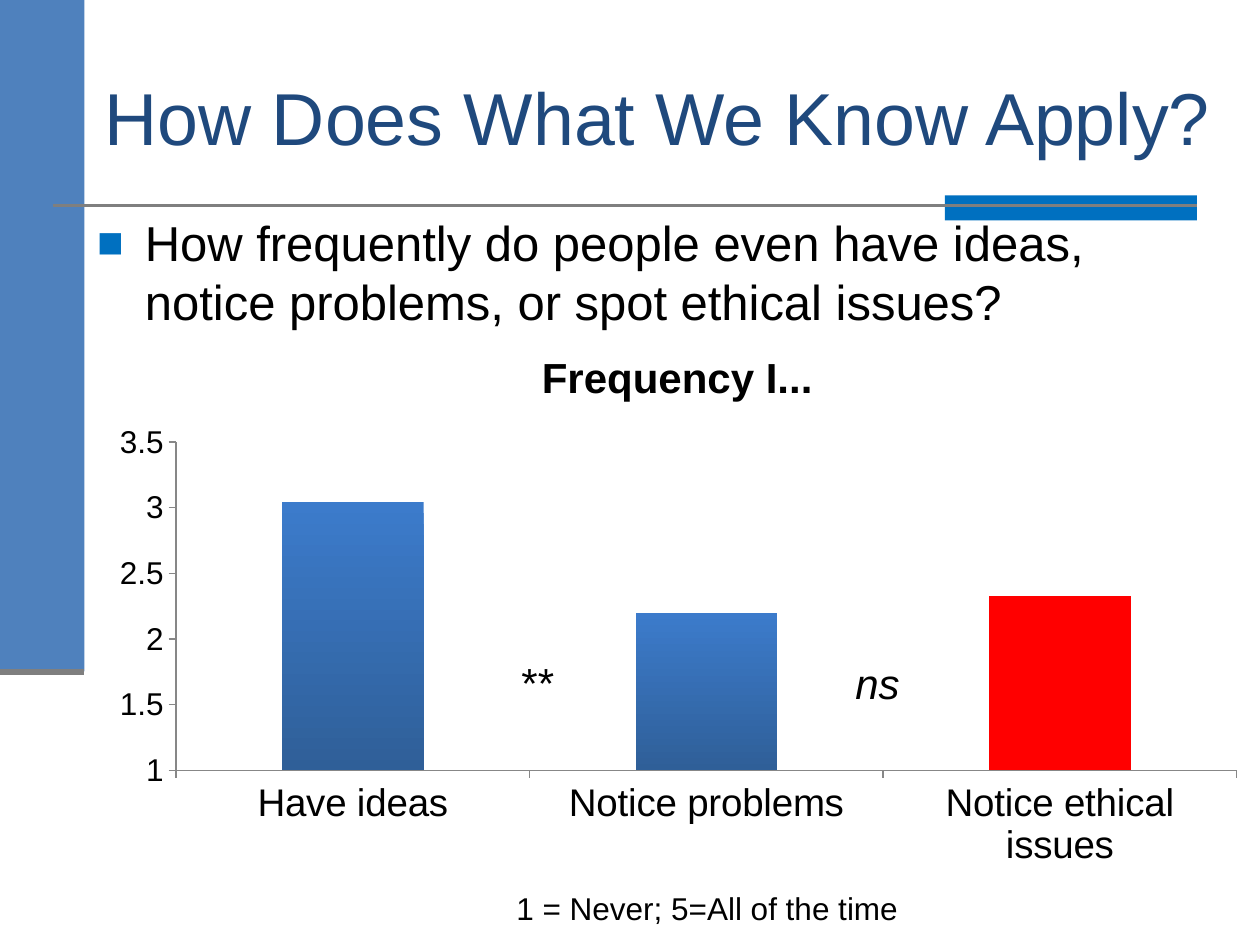
from lxml import etree
from pptx import Presentation
from pptx.chart.data import CategoryChartData
from pptx.dml.color import RGBColor
from pptx.enum.chart import XL_CHART_TYPE, XL_TICK_MARK
from pptx.enum.shapes import MSO_CONNECTOR, MSO_SHAPE
from pptx.enum.text import MSO_ANCHOR, MSO_AUTO_SIZE, PP_ALIGN
from pptx.oxml import parse_xml
from pptx.oxml.ns import nsdecls, qn
from pptx.util import Inches, Pt

COLUMN = XL_CHART_TYPE.COLUMN_CLUSTERED
TICK_OUT, TICK_NONE = XL_TICK_MARK.OUTSIDE, XL_TICK_MARK.NONE
RECTANGLE, STRAIGHT = MSO_SHAPE.RECTANGLE, MSO_CONNECTOR.STRAIGHT
LEFT, MIDDLE = PP_ALIGN.LEFT, MSO_ANCHOR.MIDDLE
NO_FIT, GROW = MSO_AUTO_SIZE.NONE, MSO_AUTO_SIZE.SHAPE_TO_FIT_TEXT

FONT = "Arial"
COLORS = {
    "text": "000000",
    "title": "1F497D",
    "side": "4F81BD",
    "accent": "0070C0",
    "rule": "7F7F7F",
    "axis": "878787",
    "bar_top": "3C7BCB",
    "bar_bottom": "2F5F98",
    "highlight": "FF0000",
}
SIDE_WIDTH, SIDE_HEIGHT = 0.67, 5.33


def color(name):
    return RGBColor.from_string(COLORS[name])


def format_font(font, size, name="text", bold=False, italic=False):
    font.name = FONT
    font.size = Pt(size)
    font.bold = bold
    font.italic = italic
    font.color.rgb = color(name)


def write(frame, text, size, **style):
    para = frame.paragraphs[0]
    para.alignment = LEFT
    span = para.add_run()
    span.text = text
    format_font(span.font, size, **style)
    return para


def place(box, left, top, width, height):
    box.left, box.top = Inches(left), Inches(top)
    box.width, box.height = Inches(width), Inches(height)


def add_block(page, name, *area):
    block = page.shapes.add_shape(RECTANGLE, *map(Inches, area))
    block.shadow.inherit = False
    block.fill.solid()
    block.fill.fore_color.rgb = color(name)
    block.line.fill.background()


def add_rule(page, start, end, level, weight):
    rule = page.shapes.add_connector(
        STRAIGHT, Inches(start), Inches(level), Inches(end), Inches(level))
    rule.line.color.rgb = color("rule")
    rule.line.width = Pt(weight)
    etree.SubElement(rule._element.spPr, qn("a:effectLst"))


def add_label(page, text, area, size, **style):
    box = page.shapes.add_textbox(*map(Inches, area))
    box.text_frame.word_wrap = False
    box.text_frame.auto_size = GROW
    write(box.text_frame, text, size, **style)


def add_title(page, text):
    title = page.shapes.title
    place(title, 0.73, 0.3, 9.85, 1.25)
    title.text_frame.vertical_anchor = MIDDLE
    title.text_frame.auto_size = NO_FIT
    write(title.text_frame, text, 42, name="title")


def add_bullet(page, text):
    body = page.placeholders[1]
    place(body, SIDE_WIDTH, 1.64, 9, 1.27)
    body.text_frame.auto_size = NO_FIT
    properties = write(body.text_frame, text, 28)._p.get_or_add_pPr()
    properties.set("marL", str(Inches(0.38)))
    properties.set("indent", str(Inches(-0.38)))
    bullet_color = etree.SubElement(properties, qn("a:buClr"))
    etree.SubElement(bullet_color, qn("a:srgbClr"), val=COLORS["accent"])
    etree.SubElement(properties, qn("a:buSzPct"), val="90000")
    etree.SubElement(properties, qn("a:buFont"), typeface=FONT)
    etree.SubElement(properties, qn("a:buChar"), char="■")


def format_axis(axis, size):
    axis.has_major_gridlines = False
    axis.major_tick_mark = TICK_OUT
    axis.minor_tick_mark = TICK_NONE
    axis.format.line.color.rgb = color("axis")
    format_font(axis.tick_labels.font, size)


def set_plot_area(chart, **shares):
    plot_area = chart._chartSpace.chart.plotArea
    for old in plot_area.findall(qn("c:layout")):
        plot_area.remove(old)
    parts = "".join(f'<c:{key} val="{share}"/>' for key, share in shares.items())
    plot_area.insert(0, parse_xml(
        f'<c:layout {nsdecls("c")}><c:manualLayout><c:layoutTarget val="inner"/>'
        f'<c:xMode val="edge"/><c:yMode val="edge"/>{parts}'
        '</c:manualLayout></c:layout>'))


def add_frequency_chart(page):
    data = CategoryChartData()
    data.categories = ["Have ideas", "Notice problems", "Notice ethical issues"]
    data.add_series("Series 1", (3.04, 2.2, 2.33))
    area = map(Inches, (0.75, 2.58, 9.25, 4.42))
    chart = page.shapes.add_chart(COLUMN, *area, data).chart
    format_font(chart.font, 10)
    chart.has_legend = False
    chart.has_title = True
    write(chart.chart_title.text_frame, "Frequency I...", 24, bold=True)
    chart.chart_title.include_in_layout = False
    format_axis(chart.category_axis, 22)
    format_axis(chart.value_axis, 18)
    chart.value_axis.minimum_scale = 1
    chart.value_axis.maximum_scale = 3.5
    chart.value_axis.major_unit = 0.5
    set_plot_area(chart, x=0.07, y=0.21, w=0.91, h=0.59)

    plot = chart.plots[0]
    plot.gap_width = 150
    plot.vary_by_categories = False
    series = plot.series[0]
    fill = series.format.fill
    fill.gradient()
    fill.gradient_angle = 270
    for stop, name in zip(fill.gradient_stops, ("bar_top", "bar_bottom")):
        stop.color.rgb = color(name)
    highlight = series.points[2].format.fill
    highlight.solid()
    highlight.fore_color.rgb = color("highlight")


def main():
    deck = Presentation()
    deck.slide_width, deck.slide_height = Inches(10), Inches(7.5)
    page = deck.slides.add_slide(deck.slide_layouts[1])
    add_block(page, "side", 0, 0, SIDE_WIDTH, SIDE_HEIGHT)
    add_block(page, "accent", 7.5, 1.55, 2, 0.2)
    add_rule(page, 0.42, 9.5, 1.63, 1.5)
    add_rule(page, 0, SIDE_WIDTH, SIDE_HEIGHT, 3.5)
    add_title(page, "How Does What We Know Apply?")
    add_bullet(page, "How frequently do people even have ideas, "
                     "notice problems, or spot ethical issues?")
    add_frequency_chart(page)
    add_label(page, "**", (4.04, 5.16, 0.46, 0.51), 24)
    add_label(page, "ns", (6.69, 5.17, 0.64, 0.51), 24, italic=True)
    add_label(page, "1 = Never; 5=All of the time", (4, 7.01, 3.26, 0.4), 18)
    deck.save("out.pptx")


if __name__ == "__main__":
    main()
